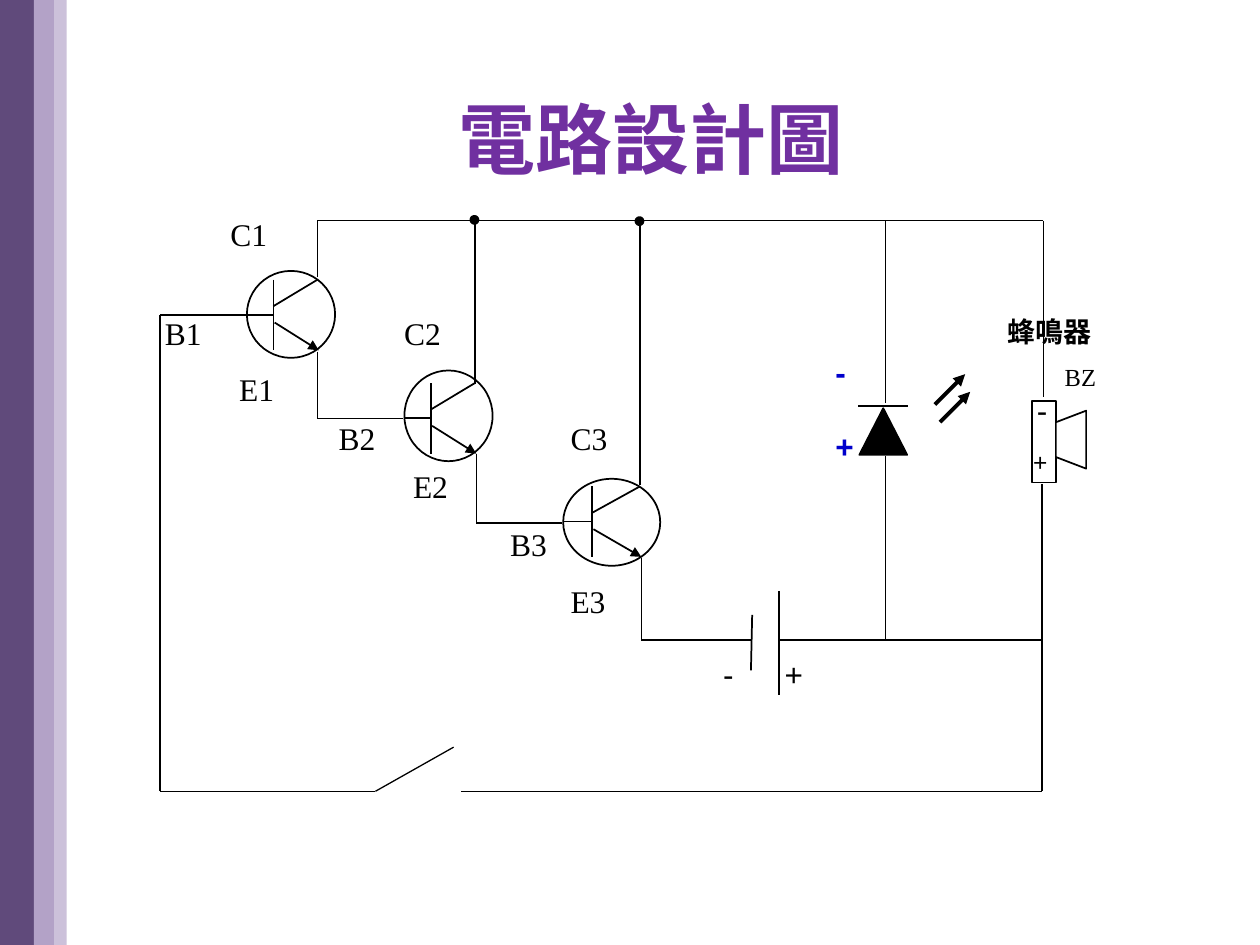
from dataclasses import dataclass

from pptx import Presentation
from pptx import util as u
from pptx.dml.color import RGBColor
from pptx.enum import shapes, text
from pptx.oxml import ns
from lxml import etree


@dataclass(frozen=True)
class Theme:
    ink: str = "000000"
    paper: str = "FFFFFF"
    title: str = "7030A0"
    polarity: str = "0000CC"
    bands: tuple = ("604A7B", "B3A2C7", "CCC1DA")
    serif: str = "Times New Roman"
    sans: str = "Arial"
    cjk: str = "Noto Sans CJK SC"
    title_size: int = 44
    label_size: int = 18
    name_size: int = 16
    small_size: int = 14
    wire: float = 0.75
    symbol: float = 1
    dot: float = 2
    ray: float = 2.25


PX = 9144
SHAPE = shapes.MSO_SHAPE


def px(*values):
    return [u.Emu(v * PX) for v in values]


class Circuit:
    def __init__(self, slide, theme):
        self.s = slide
        self.t = theme

    def format_text(self, tf, font, size, color, bold):
        for p in tf.paragraphs:
            for r in p.runs:
                r.font.name = font
                r.font.size = u.Pt(size)
                r.font.bold = bold
                r.font.color.rgb = RGBColor.from_string(color)
                if font == self.t.cjk:
                    ea = etree.SubElement(r.font._element, ns.qn("a:ea"))
                    ea.set("typeface", font)

    def title(self, words, x, y, w, h):
        sp = self.s.shapes.title
        sp.left, sp.top, sp.width, sp.height = px(x, y, w, h)
        tf = sp.text_frame
        tf.text = words
        tf.vertical_anchor = text.MSO_ANCHOR.MIDDLE
        tf.paragraphs[0].alignment = text.PP_ALIGN.CENTER
        self.format_text(tf, self.t.cjk, self.t.title_size, self.t.title, True)

    def label(self, words, x, y, w, h, font=None, size=None, color=None,
              bold=False, inset=None, gap=0):
        sp = self.s.shapes.add_textbox(*px(x, y, w, h))
        tf = sp.text_frame
        tf.text = words
        tf.word_wrap = inset is not None
        if inset is not None:
            tf.margin_left = tf.margin_right = u.Emu(inset * PX)
            tf.margin_top = tf.margin_bottom = u.Emu(inset * PX)
        for p in tf.paragraphs[1:]:
            p.space_before = u.Pt(gap)
        self.format_text(tf, font or self.t.serif, size or self.t.label_size,
                         color or self.t.ink, bold)

    def shape(self, kind, x, y, w, h, fill=None, line=None, turn=0):
        sp = self.s.shapes.add_shape(kind, *px(x, y, w, h))
        sp.shadow.inherit = False
        sp.rotation = turn
        if fill:
            sp.fill.solid()
            sp.fill.fore_color.rgb = RGBColor.from_string(fill)
        else:
            sp.fill.background()
        if line:
            sp.line.color.rgb = RGBColor.from_string(self.t.ink)
            sp.line.width = u.Pt(line)
        else:
            sp.line.fill.background()

    def line(self, x1, y1, x2, y2, width=None, arrow=False):
        c = self.s.shapes.add_connector(shapes.MSO_CONNECTOR.STRAIGHT,
                                        *px(x1, y1, x2, y2))
        c.line.color.rgb = RGBColor.from_string(self.t.ink)
        c.line.width = u.Pt(width or self.t.wire)
        spPr = c._element.spPr
        if arrow:
            tail = etree.SubElement(spPr.find(ns.qn("a:ln")), ns.qn("a:tailEnd"))
            tail.set("type", "triangle")
        etree.SubElement(spPr, ns.qn("a:effectLst"))

    def transistor(self, x, y, w, h, bar_top, base_y):
        width = self.t.symbol
        bar = x + round(0.3 * w)
        tip = bar + w // 2
        self.shape(SHAPE.OVAL, x, y, w, h, line=width)
        self.line(bar, bar_top, bar, bar_top + 56, width)
        self.line(bar, bar_top + 21, tip, bar_top, width)
        self.line(bar + 1, bar_top + 34, tip + 1, bar_top + 56, width, arrow=True)
        self.line(x, base_y, bar, base_y, width)

    def battery(self):
        self.line(618, 469, 618, 552, self.t.symbol)
        self.line(597, 488, 596, 532, self.t.symbol)
        for sign, x in (("-", 564), ("+", 613)):
            self.label(sign, x, 515, 40, 40, self.t.sans)

    def led(self):
        t = self.t
        self.line(681, 322, 721, 322, t.symbol)
        self.shape(SHAPE.ISOSCELES_TRIANGLE, 682, 324, 38, 37, t.ink, t.symbol)
        for x, y in ((746, 335), (742, 321)):
            self.line(x, y, x + 24, y - 24, t.ray, arrow=True)
        self.label("-\n+", 658, 275, 26, 133, t.sans, color=t.polarity,
                   bold=True, inset=5, gap=21)

    def buzzer(self):
        t = self.t
        self.shape(SHAPE.RECTANGLE, 819, 318, 19, 65, line=t.symbol)
        self.shape(SHAPE.FLOWCHART_MANUAL_OPERATION, 827, 337, 46, 24,
                   t.paper, t.symbol, turn=90)
        self.label("-", 823, 310, 10, 36, t.sans, inset=0)
        self.label("+", 820, 355, 10, 28, t.sans, t.small_size, inset=0)
        self.label("BZ", 845, 287, 48, 24, size=t.small_size, inset=0)
        self.label("蜂鳴器", 790, 245, 88, 37, t.cjk, t.name_size, bold=True)


BANDS = [(0, 28), (27, 16), (43, 10)]
LABELS = [
    ("C1", 173, 166), ("B1", 121, 244), ("E1", 180, 289),
    ("C2", 311, 244), ("B2", 259, 328), ("E2", 318, 366),
    ("C3", 443, 328), ("B3", 395, 412), ("E3", 443, 457),
]
WIRES = [
    (252, 175, 828, 175),
    (252, 220, 252, 175), (377, 305, 377, 175), (508, 385, 508, 175),
    (252, 279, 252, 332), (252, 332, 320, 332),
    (378, 360, 378, 415), (378, 415, 446, 415),
    (509, 443, 509, 508), (509, 508, 596, 508), (619, 508, 828, 508),
    (703, 175, 703, 320), (703, 362, 703, 508),
    (828, 175, 828, 315), (827, 384, 827, 628),
    (195, 250, 127, 250), (127, 250, 127, 628), (127, 628, 298, 628),
    (298, 628, 360, 593), (366, 628, 827, 628),
]
TRANSISTORS = [
    (196, 215, 70, 69, 222, 250),
    (321, 294, 70, 72, 304, 332),
    (447, 380, 77, 69, 386, 414),
]
JUNCTIONS = [(374, 172), (505, 173)]


def main():
    prs = Presentation()
    prs.slide_width, prs.slide_height = px(1000, 750)
    theme = Theme()
    c = Circuit(prs.slides.add_slide(prs.slide_layouts[5]), theme)

    for (x, w), color in zip(BANDS, theme.bands):
        c.shape(SHAPE.RECTANGLE, x, 0, w, 750, color)
    c.title("電路設計圖", 67, 47, 900, 125)
    for words, x, y in LABELS:
        c.label(words, x, y, 50, 40)
    for wire in WIRES:
        c.line(*wire)
    for place in TRANSISTORS:
        c.transistor(*place)
    for x, y in JUNCTIONS:
        c.shape(SHAPE.OVAL, x, y, 5, 5, theme.ink, theme.dot)
    c.battery()
    c.led()
    c.buzzer()
    prs.save("out.pptx")


if __name__ == "__main__":
    main()
